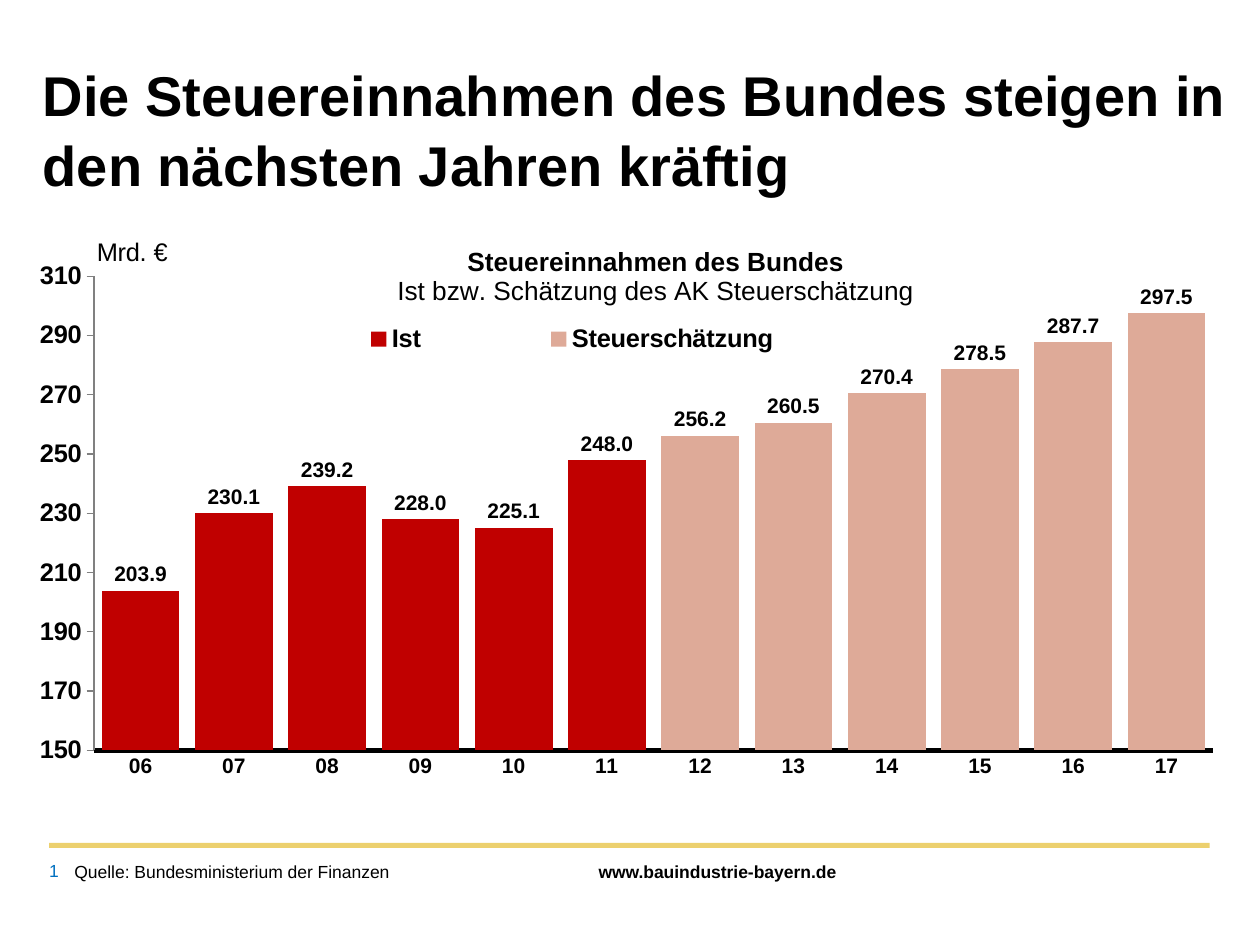
from lxml import etree
from pptx import Presentation
from pptx.chart.data import CategoryChartData
from pptx.dml.color import RGBColor
from pptx.enum.chart import XL_CHART_TYPE, XL_LABEL_POSITION, XL_LEGEND_POSITION, XL_TICK_MARK
from pptx.enum.shapes import MSO_SHAPE
from pptx.enum.text import MSO_ANCHOR
from pptx.oxml.ns import qn
from pptx.util import Inches, Pt

COLUMNS = XL_CHART_TYPE.COLUMN_CLUSTERED
LABEL_ABOVE = XL_LABEL_POSITION.OUTSIDE_END
LEGEND_RIGHT = XL_LEGEND_POSITION.RIGHT
TICK_NONE, TICK_OUTSIDE = XL_TICK_MARK.NONE, XL_TICK_MARK.OUTSIDE
RECTANGLE = MSO_SHAPE.RECTANGLE
TOP, MIDDLE = MSO_ANCHOR.TOP, MSO_ANCHOR.MIDDLE

BLACK = RGBColor(0x00, 0x00, 0x00)
GREY = RGBColor(0x80, 0x80, 0x80)
RED = RGBColor(0xC0, 0x00, 0x00)
SALMON = RGBColor(0xDE, 0xAA, 0x98)
GOLD = RGBColor(0xEC, 0xD0, 0x6E)
BLUE = RGBColor(0x00, 0x70, 0xC0)

ACTUAL = [203.9, 230.1, 239.2, 228.0, 225.1, 248.0]
ESTIMATE = [256.2, 260.5, 270.4, 278.5, 287.7, 297.5]
YEARS = [f"{year:02d}" for year in range(6, 18)]


class SlideBuilder:
    font_name = "Arial"

    def __init__(self, slide):
        self.slide = slide

    def style(self, font, size, bold=False, color=BLACK):
        font.name = self.font_name
        font.size = Pt(size)
        font.bold = bold
        font.color.rgb = color

    def bar(self, left, top, width, height, color):
        rule = self.slide.shapes.add_shape(
            RECTANGLE, Inches(left), Inches(top), Inches(width), Inches(height))
        rule.shadow.inherit = False
        rule.fill.solid()
        rule.fill.fore_color.rgb = color
        rule.line.fill.background()

    def text(self, left, top, width, height, words, size,
             bold=False, color=BLACK, anchor=TOP, spacing=1.0):
        box = self.slide.shapes.add_textbox(
            Inches(left), Inches(top), Inches(width), Inches(height))
        frame = box.text_frame
        frame.word_wrap = True
        frame.vertical_anchor = anchor
        frame.margin_left = frame.margin_right = 0
        frame.margin_top = frame.margin_bottom = 0
        frame.text = words
        paragraph = frame.paragraphs[0]
        paragraph.line_spacing = spacing
        self.style(paragraph.runs[0].font, size, bold, color)

    def place(self, part, index, **settings):
        present = part.find(qn("c:layout"))
        if present is not None:
            part.remove(present)
        layout = etree.Element(qn("c:layout"))
        manual = etree.SubElement(layout, qn("c:manualLayout"))
        for tag, value in settings.items():
            etree.SubElement(manual, qn(f"c:{tag}")).set("val", str(value))
        part.insert(index, layout)

    def place_title(self, title, x, y):
        self.place(title._element, 1, xMode="edge", yMode="edge", x=x, y=y)
        title._element.find(qn("c:overlay")).set("val", "1")

    def column_chart(self, left, top, width, height, categories, series):
        data = CategoryChartData()
        data.categories = categories
        for name, values, _, number_format in series:
            data.add_series(name, values, number_format)
        chart = self.slide.shapes.add_chart(
            COLUMNS, Inches(left), Inches(top), Inches(width), Inches(height), data).chart
        self.style(chart.font, 14.5, True)
        plot = chart.plots[0]
        plot.gap_width = 20
        plot.overlap = 100
        plot.vary_by_categories = False
        for columns, (_, _, color, number_format) in zip(plot.series, series):
            columns.format.fill.solid()
            columns.format.fill.fore_color.rgb = color
            labels = columns.data_labels
            labels.show_value = True
            labels.number_format = number_format
            labels.number_format_is_linked = False
            labels.position = LABEL_ABOVE
            self.style(labels.font, 12, True)
        self.place(chart._chartSpace.chart.plotArea, 0, layoutTarget="inner",
                   xMode="edge", yMode="edge", x=0.0465, y=0.098, w=0.947, h=0.765)
        return chart

    def chart_axes(self, chart, unit, low, high, step):
        years = chart.category_axis
        years.major_tick_mark = TICK_NONE
        years.format.line.color.rgb = BLACK
        years.format.line.width = Pt(2.55)
        self.style(years.tick_labels.font, 12, True)
        amounts = chart.value_axis
        amounts.minimum_scale = low
        amounts.maximum_scale = high
        amounts.major_unit = step
        amounts.has_major_gridlines = False
        amounts.major_tick_mark = TICK_OUTSIDE
        amounts.format.line.color.rgb = GREY
        amounts.tick_labels.number_format = "0"
        amounts.tick_labels.number_format_is_linked = False
        self.style(amounts.tick_labels.font, 14.5, True)
        frame = amounts.axis_title.text_frame
        frame.text = unit
        frame._txBody.bodyPr.set("rot", "0")
        frame._txBody.bodyPr.set("vert", "horz")
        self.style(frame.paragraphs[0].runs[0].font, 14.5)
        self.place_title(amounts.axis_title, 0.045, 0.026)

    def chart_heading(self, chart, heading, subheading):
        chart.has_title = True
        frame = chart.chart_title.text_frame
        frame.text = f"{heading}\n{subheading}"
        for paragraph, bold in zip(frame.paragraphs, (True, False)):
            self.style(paragraph.runs[0].font, 15, bold)
        self.place_title(chart.chart_title, 0.3, 0.043)

    def chart_legend(self, chart):
        chart.has_legend = True
        legend = chart.legend
        legend.position = LEGEND_RIGHT
        legend.include_in_layout = False
        self.style(legend.font, 14.5, True)
        self.place(legend._element, 1, xMode="edge", yMode="edge",
                   x=0.178, y=0.163, w=0.546, h=0.073)


def main():
    deck = Presentation()
    deck.slide_width, deck.slide_height = Inches(10), Inches(7.5)
    page = SlideBuilder(deck.slides.add_slide(deck.slide_layouts[6]))

    page.bar(0.39, 6.69, 9.21, 0.04, GOLD)
    page.text(4.75, 6.83, 2.31, 0.17, "www.bauindustrie-bayern.de", 10, bold=True)
    page.text(0.34, 0.45, 9.66, 0.81,
              "Die Steuereinnahmen des Bundes steigen in den nächsten Jahren kräftig",
              32, bold=True, spacing=1.05)

    revenue = page.column_chart(0.31, 1.71, 9.38, 4.92, YEARS, [
        ("Ist", ACTUAL + [None] * len(ESTIMATE), RED, "#,##0.0"),
        ("Steuerschätzung", [None] * len(ACTUAL) + ESTIMATE, SALMON, "0.0"),
    ])
    page.chart_axes(revenue, "Mrd. €", 150, 310, 20)
    page.chart_heading(revenue, "Steuereinnahmen des Bundes",
                       "Ist bzw. Schätzung des AK Steuerschätzung")
    page.chart_legend(revenue)

    page.text(0.59, 6.83, 3.42, 0.2, "Quelle: Bundesministerium der Finanzen", 10)
    page.text(0.39, 6.83, 2.33, 0.16, "1", 10, color=BLUE, anchor=MIDDLE)
    deck.save("out.pptx")


if __name__ == "__main__":
    main()
